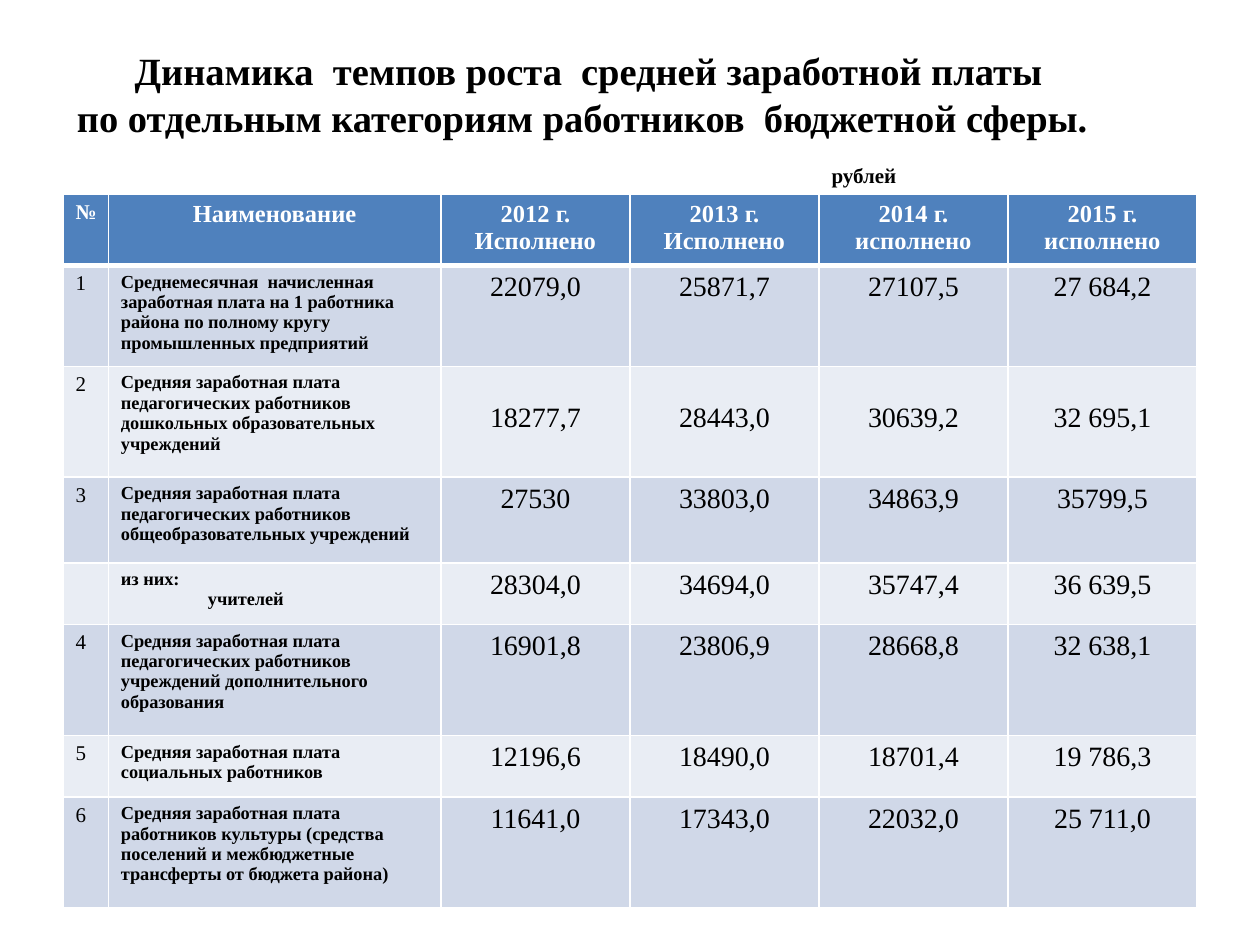
from dataclasses import dataclass

from lxml.etree import SubElement
from pptx import Presentation
from pptx.dml.color import RGBColor
from pptx.enum.text import MSO_ANCHOR, PP_ALIGN
from pptx.oxml.ns import qn
from pptx.util import Inches, Pt


@dataclass(frozen=True)
class Theme:
    font: str = "Times New Roman"
    ink: str = "000000"
    white: str = "FFFFFF"
    head: str = "4F81BD"
    bands: tuple = ("D0D8E8", "E9EDF4")
    title: float = 22
    pitch: float = 27
    top: float = 14
    small: float = 12
    label: float = 10.5
    value: float = 16


THEME = Theme()
WIDTHS = [0.36, 2.64] + [1.5] * 4
HEIGHTS = [0.52, 0.75, 0.88, 0.68, 0.49, 0.88, 0.49, 0.88]
LOW_ROW = 2
TITLE = [
    ("Динамика  темпов роста  средней заработной платы", THEME.title, PP_ALIGN.CENTER, 0.1),
    ("по отдельным категориям работников  бюджетной сферы.", THEME.title, PP_ALIGN.CENTER, 0),
    ("рублей", THEME.small, PP_ALIGN.LEFT, 6.1),
]
HEADS = ["№", "Наименование", "2012 г. Исполнено", "2013 г. Исполнено",
         "2014 г. исполнено", "2015 г. исполнено"]
ROWS = [
    ["1", "Среднемесячная  начисленная заработная плата на 1 работника района "
     "по полному кругу промышленных предприятий",
     "22079,0", "25871,7", "27107,5", "27 684,2"],
    ["2", "Средняя заработная плата педагогических работников "
     "дошкольных образовательных учреждений",
     "18277,7", "28443,0", "30639,2", "32 695,1"],
    ["3", "Средняя заработная плата педагогических работников "
     "общеобразовательных учреждений",
     "27530", "33803,0", "34863,9", "35799,5"],
    ["", "из них:\nучителей", "28304,0", "34694,0", "35747,4", "36 639,5"],
    ["4", "Средняя заработная плата педагогических работников "
     "учреждений дополнительного образования",
     "16901,8", "23806,9", "28668,8", "32 638,1"],
    ["5", "Средняя заработная плата социальных работников",
     "12196,6", "18490,0", "18701,4", "19 786,3"],
    ["6", "Средняя заработная плата работников культуры (средства поселений "
     "и межбюджетные трансферты от бюджета района)",
     "11641,0", "17343,0", "22032,0", "25 711,0"],
]


def add_run(para, text, size, color, bold):
    run = para.add_run()
    run.text = text
    run.font.name = THEME.font
    run.font.size = Pt(size)
    run.font.bold = bold
    run.font.color.rgb = RGBColor.from_string(color)


def next_para(frame, index):
    return frame.add_paragraph() if index else frame.paragraphs[0]


def indent(para, inches):
    para._p.get_or_add_pPr().set("marL", str(Inches(inches)))


def add_title(slide):
    box = slide.shapes.add_textbox(Inches(0.5), Inches(0.3), Inches(8.24), Inches(1.25))
    frame = box.text_frame
    frame.word_wrap = True
    frame.vertical_anchor = MSO_ANCHOR.MIDDLE
    frame.margin_left = frame.margin_right = 0
    for index, (text, size, align, left) in enumerate(TITLE):
        para = next_para(frame, index)
        para.alignment = align
        para.line_spacing = Pt(THEME.pitch)
        indent(para, left)
        add_run(para, text, size, THEME.ink, True)


def add_edges(cell, base):
    props = cell._tc.get_or_add_tcPr()
    for side, width in (("L", 1), ("R", 1), ("T", 1), ("B", base)):
        line = SubElement(props, qn(f"a:ln{side}"), w=str(Pt(width)))
        fill = SubElement(line, qn("a:solidFill"))
        SubElement(fill, qn("a:srgbClr"), val=THEME.white)


def cell_style(row, col):
    if row == 0:
        return (THEME.top if col else THEME.small), THEME.white, True
    if col == 1:
        return THEME.label, THEME.ink, True
    return (THEME.value if col else THEME.small), THEME.ink, False


def fill_cell(cell, text, row, col):
    add_edges(cell, 1 if row else 3)
    color = THEME.bands[(row - 1) % 2] if row else THEME.head
    cell.fill.solid()
    cell.fill.fore_color.rgb = RGBColor.from_string(color)
    if row == LOW_ROW and col > 1:
        cell.margin_top = Inches(0.29)
    if not text:
        return
    center = col > 1 or (row == 0 and col == 1)
    for index, line in enumerate(text.split("\n")):
        para = next_para(cell.text_frame, index)
        para.alignment = PP_ALIGN.CENTER if center else PP_ALIGN.LEFT
        if index:
            indent(para, 0.69)
        add_run(para, line, *cell_style(row, col))


def add_wages(slide):
    frame = slide.shapes.add_table(
        len(HEIGHTS), len(WIDTHS), Inches(0.5), Inches(1.54),
        Inches(sum(WIDTHS)), Inches(sum(HEIGHTS)))
    table = frame.table
    for column, width in zip(table.columns, WIDTHS):
        column.width = Inches(width)
    for line, height in zip(table.rows, HEIGHTS):
        line.height = Inches(height)
    for row, texts in enumerate([HEADS] + ROWS):
        for col, text in enumerate(texts):
            fill_cell(table.cell(row, col), text, row, col)


def main():
    deck = Presentation()
    deck.slide_width, deck.slide_height = Inches(10), Inches(7.5)
    slide = deck.slides.add_slide(deck.slide_layouts[6])
    add_title(slide)
    add_wages(slide)
    deck.save("out.pptx")


if __name__ == "__main__":
    main()
